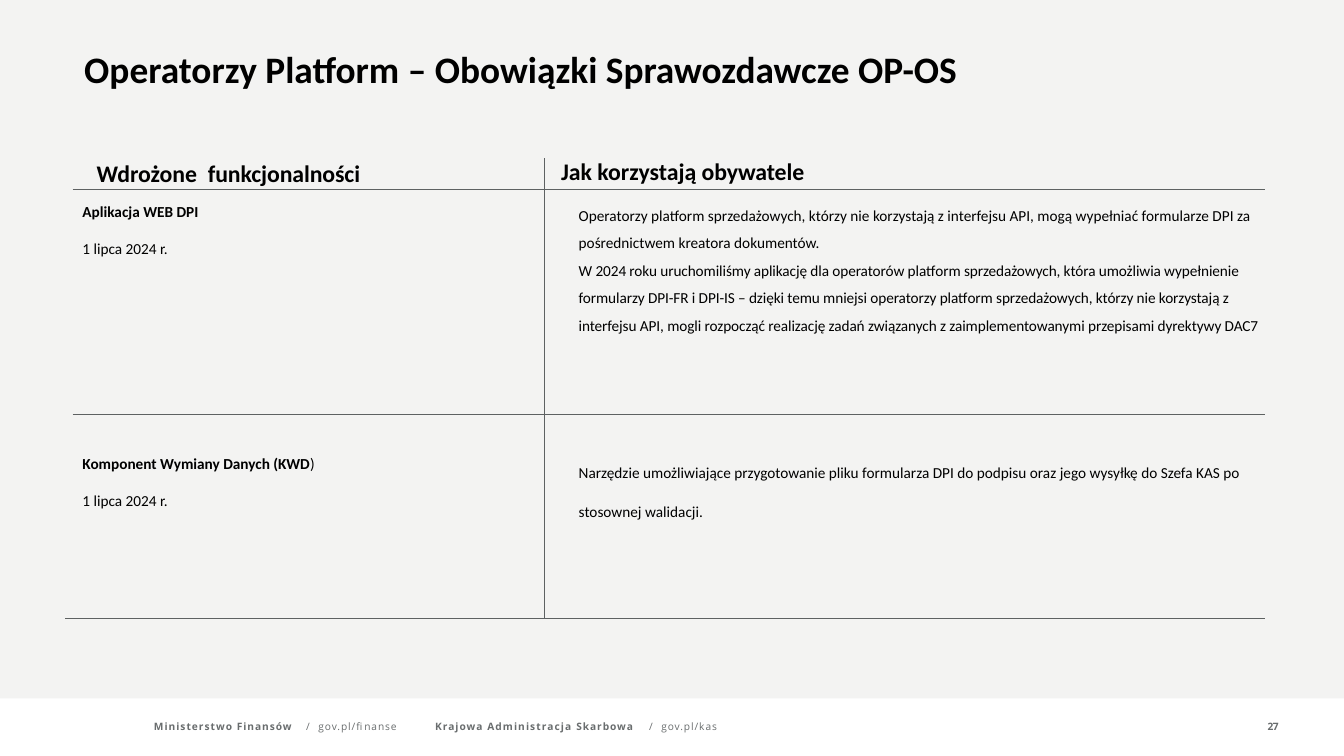
from lxml import etree
from pptx import Presentation
from pptx import util as u
from pptx.dml.color import RGBColor
from pptx.enum import shapes, text
from pptx.oxml.ns import qn

COLOURS = {"panel": "F3F3F2", "rule": "5D6162", "footer": "696D6E", "ink": "000000"}
SLIDE_SIZE = (21.99, 12.37)
PANEL_HEIGHT = 11.43

# Runs are (text, bold, letter spacing in points).
TITLE = [("Operatorzy Platform – Obowiązki Sprawozdawcze OP-OS", True, 0)]
HEADINGS = [
    ((1.57, 2.57, 6.05, 0.49),
     [("Wdrożone", True, 0), (" ", True, 6.3), ("funkcjonalności", True, -0.1)]),
    ((9.17, 2.54, 6.29, 0.49),
     [("Jak korzystają ", True, 0), ("obywatele", True, -0.1)]),
]
DATE = [("1 lipca 2024 r.", False, 0)]
FEATURES = [
    (3.26, [[("Aplikacja WEB DPI", True, 0)], DATE]),
    (7.39, [[("Komponent Wymiany Danych (KWD", True, 0), (")", False, 0)], DATE]),
]
# Top, height, line spacing, paragraphs
USES = [
    (3.17, 2.92, 1.5, [
        [("Operatorzy platform sprzedażowych, którzy nie korzystają z interfejsu API, "
          "mogą wypełniać formularze DPI za pośrednictwem kreatora dokumentów.", False, 0)],
        [("W 2024 roku uruchomiliśmy aplikację dla operatorów platform sprzedażowych, "
          "która umożliwia wypełnienie formularzy DPI-FR i DPI-IS – dzięki temu mniejsi "
          "operatorzy platform sprzedażowych, którzy nie korzystają z interfejsu API, "
          "mogli rozpocząć realizację zadań związanych z zaimplementowanymi przepisami "
          "dyrektywy DAC7", False, -0.1)],
    ]),
    (7.19, 1.3, u.Pt(45.8), [
        [("Narzędzie umożliwiające przygotowanie pliku formularza DPI do podpisu oraz "
          "jego wysyłkę do Szefa KAS po stosownej walidacji.", False, 0)],
    ]),
]
# Left, width, indent, tab stops, runs
FOOTERS = [
    (2.51, 4.08, 0.01, (2.49, 2.69),
     [("Ministerstwo ", True, 1.2), ("Finansów\t", True, 1.1),
      ("/\t", False, -0.5), ("gov.pl/finanse", False, 1.1)]),
    (7.11, 4.69, 0.01, (3.5, 3.7),
     [("Krajowa ", True, 1.2), ("Administracja ", True, 1.3), ("Skarbowa\t", True, 1.1),
      ("/\t", False, -0.5), ("gov.pl/kas", False, 1.1)]),
    (20.7, 0.38, 0.04, (), [("27", True, -0.5)]),
]
RULE_LEFT, RULE_WIDTH = 1.19, 19.51
HEADER_Y, MIDDLE_Y, BOTTOM_Y = 3.1, 6.77, 10.12
DIVIDER_X, DIVIDER_TOP = 8.91, 2.59
BOTTOM_LEFT = 1.07


def colour(name):
    return RGBColor.from_string(COLOURS[name])


def add_text(page, area, paragraphs, size, font="Calibri", ink="ink", top_inset=None,
             before=0, gap=0, spacing=None, indent=0, tabs=()):
    """Add a text box; top_inset replaces the default margins, gap parts the paragraphs."""
    box = page.shapes.add_textbox(*map(u.Inches, area))
    frame = box.text_frame
    frame.word_wrap = True
    frame.auto_size = text.MSO_AUTO_SIZE.SHAPE_TO_FIT_TEXT
    if top_inset is not None:
        frame.margin_left = frame.margin_right = frame.margin_bottom = 0
        frame.margin_top = u.Inches(top_inset)
    for index, runs in enumerate(paragraphs):
        para = frame.add_paragraph() if index else frame.paragraphs[0]
        para.space_before = u.Pt(gap if index else before)
        if spacing:
            para.line_spacing = spacing
        properties = para._p.get_or_add_pPr()
        properties.set("marL", str(u.Inches(indent)))
        if tabs:
            stops = etree.SubElement(properties, qn("a:tabLst"))
            for stop in tabs:
                etree.SubElement(stops, qn("a:tab"), pos=str(u.Inches(stop)), algn="l")
        for words, bold, letter_spacing in runs:
            span = para.add_run()
            span.text = words
            span.font.name = font
            span.font.size = u.Pt(size)
            span.font.bold = bold
            span.font.color.rgb = colour(ink)
            if letter_spacing:
                span.font._element.set("spc", str(round(letter_spacing * 100)))


def add_rule(page, *ends):
    rule = page.shapes.add_connector(shapes.MSO_CONNECTOR.STRAIGHT, *map(u.Inches, ends))
    rule.line.color.rgb = colour("rule")
    rule.line.width = u.Pt(0.25)
    etree.SubElement(rule._element.spPr, qn("a:effectLst"))


def main():
    deck = Presentation()
    deck.slide_width, deck.slide_height = map(u.Inches, SLIDE_SIZE)
    page = deck.slides.add_slide(deck.slide_layouts[6])

    panel = page.shapes.add_shape(shapes.MSO_SHAPE.RECTANGLE, 0, 0,
                                  deck.slide_width, u.Inches(PANEL_HEIGHT))
    panel.shadow.inherit = False
    panel.fill.solid()
    panel.fill.fore_color.rgb = colour("panel")
    panel.line.fill.background()

    for left, width, indent, tabs, runs in FOOTERS:
        add_text(page, (left, 11.76, width, 0.26), [runs], 12, "Open Sans", "footer",
                 top_inset=0.03, before=2.2, indent=indent, tabs=tabs)

    for left, y in ((RULE_LEFT, HEADER_Y), (RULE_LEFT, MIDDLE_Y),
                    (RULE_LEFT, BOTTOM_Y), (BOTTOM_LEFT, BOTTOM_Y)):
        add_rule(page, left, y, left + RULE_WIDTH, y)
    add_rule(page, DIVIDER_X, DIVIDER_TOP, DIVIDER_X, BOTTOM_Y)

    add_text(page, (1.28, 0.7, 17.21, 0.84), [TITLE], 44)
    for area, runs in HEADINGS:
        add_text(page, area, [runs], 28, top_inset=0.02, before=1.1, indent=0.01)
    for top, paragraphs in FEATURES:
        add_text(page, (1.25, top, 5.05, 1.01), paragraphs, 18, gap=22)
    for top, height, spacing, paragraphs in USES:
        add_text(page, (9.37, top, 11.68, height), paragraphs, 18, spacing=spacing)

    deck.save("out.pptx")


if __name__ == "__main__":
    main()
